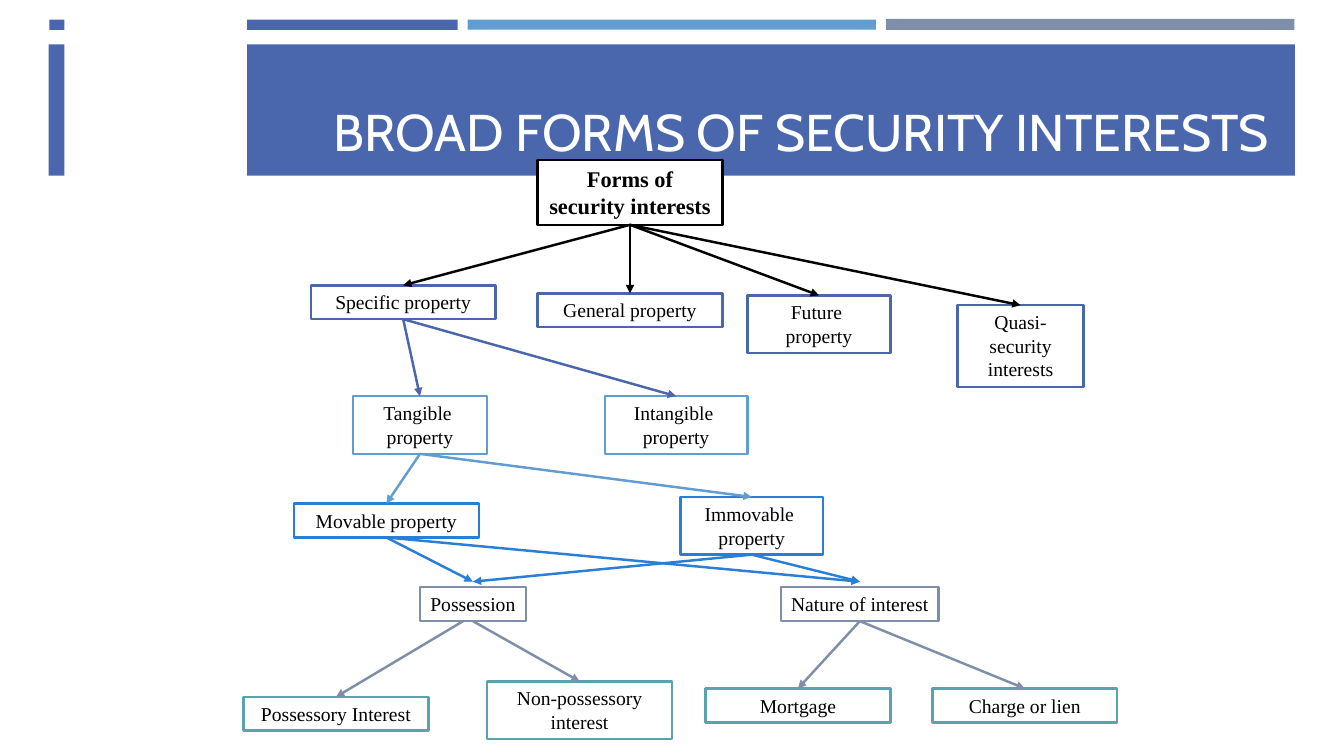
from lxml.etree import SubElement
from pptx import Presentation
from pptx.dml.color import RGBColor
from pptx.enum.shapes import MSO_CONNECTOR, MSO_SHAPE
from pptx.enum.text import MSO_ANCHOR, PP_ALIGN
from pptx.oxml.ns import qn
from pptx.util import Pt


def colour(value):
    return RGBColor.from_string(value)


def write(shape, text, align, anchor, wrap, font):
    frame = shape.text_frame
    frame.word_wrap = wrap
    frame.vertical_anchor = anchor
    para = frame.paragraphs[0]
    para.text = text
    para.alignment = align
    for span in para.runs:
        span.font.color.rgb = colour(font["color"])
        for key in ("name", "size", "bold"):
            setattr(span.font, key, font[key])


deck = Presentation()
deck.slide_width, deck.slide_height = Pt(960), Pt(540)
page = deck.slides.add_slide(deck.slide_layouts[6])

BLUE, SKY, BRIGHT, SLATE, TEAL = "4A66AC", "629DD1", "297FD5", "7F8FA9", "5AA2AE"
BLACK, WHITE = "000000", "FFFFFF"

bands = [
    (35.3, 14, 291.6, 7.4, BLUE),
    (633, 13.5, 291.6, 7.8, SLATE),
    (334, 14, 291.6, 7.2, SKY),
    (34.8, 31.7, 890.2, 93.8, BLUE),
    (46, 0, 130.4, 137.5, WHITE),
]
for left, top, width, height, fill in bands:
    band = page.shapes.add_shape(MSO_SHAPE.RECTANGLE, Pt(left), Pt(top), Pt(width), Pt(height))
    band.shadow.inherit = False
    band.fill.solid()
    band.fill.fore_color.rgb = colour(fill)
    band.line.fill.background()

title = page.shapes.add_textbox(Pt(220.3), Pt(38.9), Pt(694), Pt(80))
title_font = {"name": "Cabin", "size": Pt(36.9), "bold": False, "color": WHITE}
write(title, "BROAD FORMS OF SECURITY INTERESTS", PP_ALIGN.RIGHT, MSO_ANCHOR.BOTTOM, True, title_font)

ROOT, ONE, TWO, THREE = 46.1, 24.2, 41.2, 58.3
nodes = [
    ("Forms", "Forms of security interests", 384, 114.5, 132, ROOT, BLACK),
    ("Specific", "Specific property", 222, 203.8, 132, ONE, BLUE),
    ("General", "General property", 384, 209.5, 132, ONE, BLUE),
    ("Future", "Future \vproperty", 534, 211, 102, TWO, BLUE),
    ("Quasi", "Quasi-security\vinterests", 684, 218, 90, THREE, BLUE),
    ("Tangible", "Tangible \vproperty", 252, 283, 96, TWO, SKY),
    ("Intangible", "Intangible \vproperty", 432, 283, 102, TWO, SKY),
    ("Movable", "Movable property", 210, 359.7, 132, ONE, BRIGHT),
    ("Immovable", "Immovable \vproperty", 486, 355, 102, TWO, BRIGHT),
    ("Possession", "Possession", 300, 419.5, 75.6, ONE, SLATE),
    ("Nature", "Nature of interest", 558, 419.5, 112.4, ONE, SLATE),
    ("Possessory", "Possessory Interest", 174, 497.8, 132, ONE, TEAL),
    ("Non-possessory", "Non-possessory interest", 348, 486.7, 132, TWO, TEAL),
    ("Mortgage", "Mortgage", 504, 491.8, 132, ONE, TEAL),
    ("Charge", "Charge or lien", 666, 491.8, 132, ONE, TEAL),
]
boxes, edges = {}, {}
for name, text, left, top, width, height, edge in nodes:
    box = page.shapes.add_shape(MSO_SHAPE.RECTANGLE, Pt(left), Pt(top), Pt(width), Pt(height))
    box.shadow.inherit = False
    box.fill.solid()
    box.fill.fore_color.rgb = colour(WHITE)
    box.line.color.rgb = colour(edge)
    box.line.width = Pt(1.75)
    is_root = name == "Forms"
    font = {"name": "Times New Roman", "size": Pt(16 if is_root else 14), "bold": is_root, "color": BLACK}
    wrap = name not in ("Possession", "Nature")
    write(box, text, PP_ALIGN.CENTER, MSO_ANCHOR.TOP, wrap, font)
    boxes[name], edges[name] = box, edge

branches = {
    "Forms": ["Specific", "General", "Future", "Quasi"],
    "Specific": ["Tangible", "Intangible"],
    "Tangible": ["Movable", "Immovable"],
    "Movable": ["Possession", "Nature"],
    "Immovable": ["Possession", "Nature"],
    "Possession": ["Possessory", "Non-possessory"],
    "Nature": ["Mortgage", "Charge"],
}
for parent, children in branches.items():
    for child in children:
        start, end = boxes[parent], boxes[child]
        gap = Pt(4) if child in ("Possession", "Nature") else 0
        arrow = page.shapes.add_connector(
            MSO_CONNECTOR.STRAIGHT,
            start.left + start.width // 2, start.top + start.height,
            end.left + end.width // 2, end.top - gap)
        if child == "Possessory":
            arrow.begin_x -= Pt(7)
        else:
            arrow.begin_connect(start, 2)
        if not gap:
            arrow.end_connect(end, 0)
        arrow.line.color.rgb = colour(edges[parent])
        arrow.line.width = Pt(1.75)
        SubElement(arrow.line._get_or_add_ln(), qn("a:tailEnd"), type="triangle")
        SubElement(arrow._element.spPr, qn("a:effectLst"))

deck.save("out.pptx")
